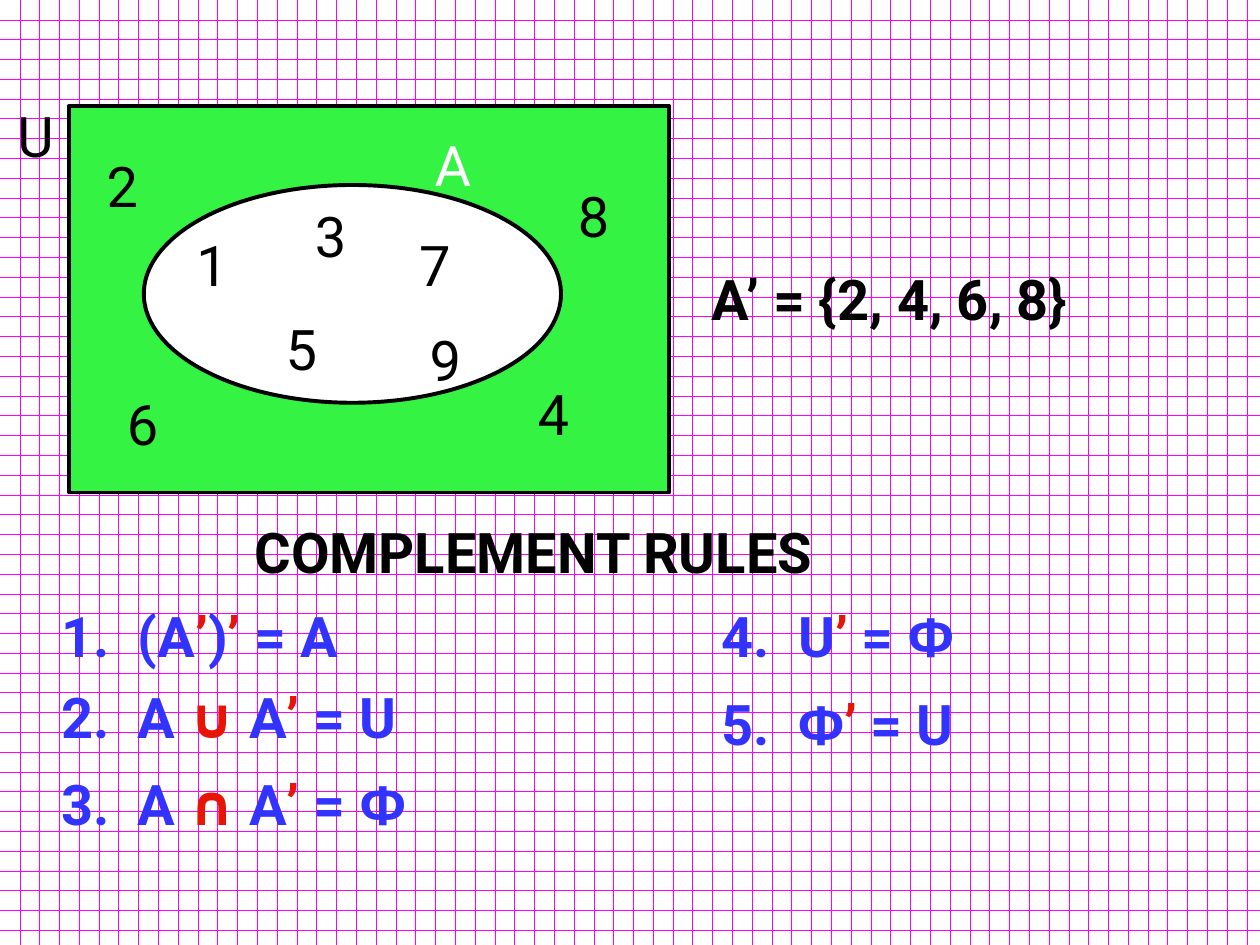
from itertools import groupby

from pptx import Presentation
from pptx.dml.color import RGBColor
from pptx.enum.dml import MSO_PATTERN
from pptx.enum.shapes import MSO_SHAPE as SHAPE
from pptx.enum.text import MSO_AUTO_SIZE as AUTO_SIZE
from pptx.util import Cm, Pt

BLACK, WHITE, GREEN = "000000", "FFFFFF", "35F343"
MAGENTA, BLUE, RED = "FF00FF", "3333FF", "E71505"

# Elements of the universal set: label, left, top (cm)
ELEMENTS = [
    ("1", 3.71, 4.52), ("2", 1.9, 2.92), ("3", 6.1, 3.94),
    ("4", 10.59, 7.52), ("5", 5.51, 6.22), ("6", 2.31, 7.72),
    ("7", 8.2, 4.52), ("8", 11.4, 3.53), ("9", 8.41, 6.43),
]

# Complement rules: text, left, top, width (cm)
RULES = [
    ("1.  (A’)’ = A", 0.99, 12.01, 8.26),
    ("2.  A ∪ A’ = U", 0.99, 13.64, 10.41),
    ("3.  A ∩ A’ = Φ", 0.99, 15.39, 10.26),
    ("4.  U’ = Φ", 14.3, 12.01, 7.59),
    ("5.  Φ’ = U", 14.3, 13.77, 7.21),
]


def rgb(value):
    return RGBColor.from_string(value)


def set_background(s):
    fill = s.background.fill
    fill.patterned()
    fill.pattern = MSO_PATTERN.DOTTED_GRID
    fill.fore_color.rgb = rgb(MAGENTA)
    fill.back_color.rgb = rgb(WHITE)


def add_region(s, kind, left, top, width, height, color):
    sp = s.shapes.add_shape(kind, Cm(left), Cm(top), Cm(width), Cm(height))
    sp.shadow.inherit = False
    sp.fill.solid()
    sp.fill.fore_color.rgb = rgb(color)
    sp.line.color.rgb = rgb(BLACK)
    sp.line.width = Pt(2.25)


def format_run(r, color, bold, font="Roboto"):
    r.font.name = font
    r.font.size = Pt(32)
    r.font.bold = bold
    r.font.color.rgb = rgb(color)


def add_box(s, left, top, width):
    sp = s.shapes.add_textbox(Cm(left), Cm(top), Cm(width), Cm(1.62))
    tf = sp.text_frame
    tf.word_wrap = True
    tf.auto_size = AUTO_SIZE.SHAPE_TO_FIT_TEXT
    return tf.paragraphs[0]


def add_label(s, text, left, top, width, color=BLACK, bold=False):
    p = add_box(s, left, top, width)
    p.text = text
    format_run(p.runs[0], color, bold)


def symbol_style(char):
    """Colour and font of one character in a rule."""
    return RED if char in "’∪∩" else BLUE, "Arial" if char == "Φ" else "Roboto"


def add_rule(s, text, left, top, width):
    p = add_box(s, left, top, width)
    for (color, font), chars in groupby(text, symbol_style):
        r = p.add_run()
        r.text = "".join(chars)
        format_run(r, color, True, font)


def main():
    prs = Presentation()
    prs.slide_width, prs.slide_height = Cm(25.4), Cm(19.05)
    s = prs.slides.add_slide(prs.slide_layouts[6])
    set_background(s)

    # Venn diagram
    add_region(s, SHAPE.RECTANGLE, 1.4, 2.13, 12.09, 7.8, GREEN)
    add_region(s, SHAPE.OVAL, 2.9, 3.73, 8.41, 4.39, WHITE)
    for text, left, top in ELEMENTS:
        add_label(s, text, left, top, 1.3)
    add_label(s, "U", 0.1, 1.93, 1.9)
    add_label(s, "A", 8.51, 2.51, 1.5, WHITE)

    # Complement and heading
    add_label(s, "A’ = {2, 4, 6, 8}", 14.1, 5.21, 11.3, bold=True)
    add_label(s, "COMPLEMENT RULES", 4.88, 10.31, 15.65, bold=True)

    # Rules in two columns
    for rule in RULES:
        add_rule(s, *rule)

    prs.save("out.pptx")


if __name__ == "__main__":
    main()
